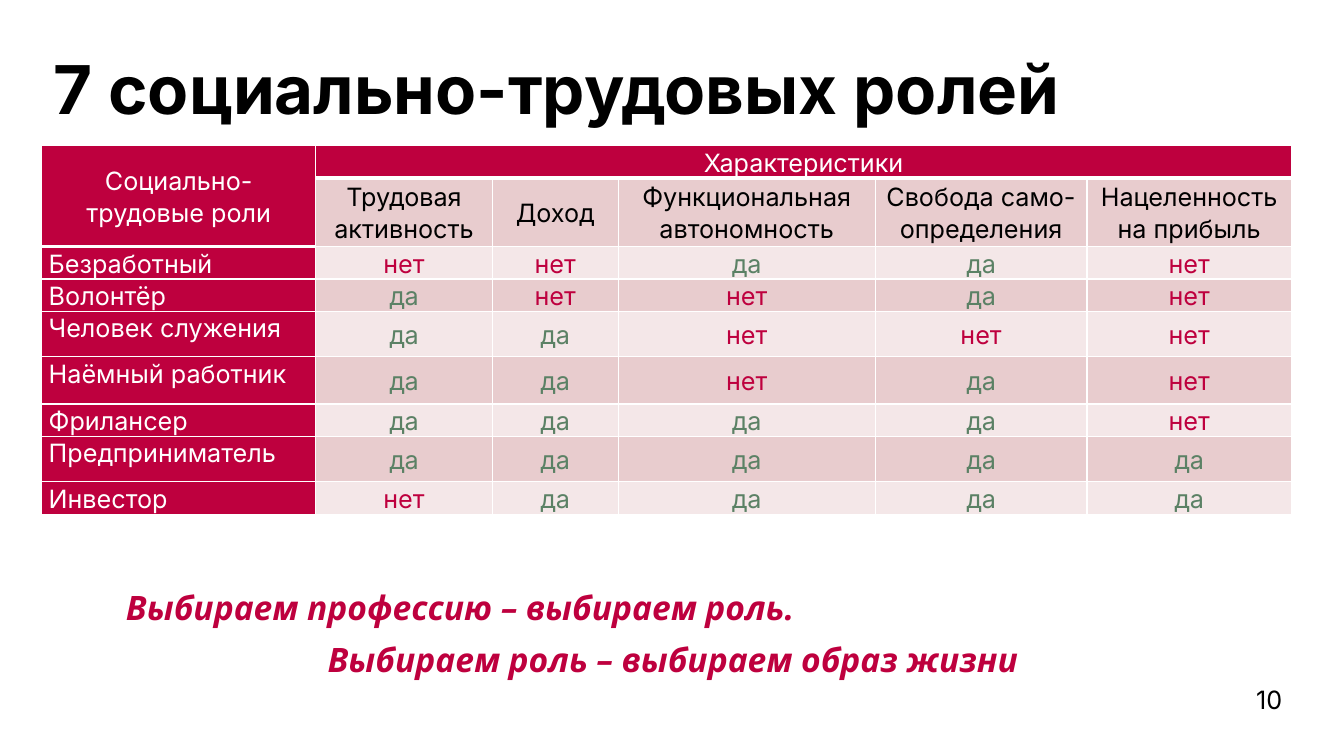
from lxml.etree import SubElement
from pptx import Presentation
from pptx.dml.color import RGBColor
from pptx.enum.text import MSO_ANCHOR, MSO_AUTO_SIZE, PP_ALIGN
from pptx.oxml.ns import qn
from pptx.util import Pt

TITLE = "7 социально-трудовых ролей"
MOTTO = ["Выбираем профессию – выбираем роль.",
         "Выбираем роль – выбираем образ жизни"]
PAGE_NUMBER = "10"
ROLES_HEADING = "Социально-трудовые роли"
TRAITS_HEADING = "Характеристики"
TRAITS = ["Трудовая активность", "Доход", "Функциональная автономность",
          "Свобода само-определения", "Нацеленность на прибыль"]
ROLES = [
    ("Безработный", "нет нет да да нет"),
    ("Волонтёр", "да нет нет да нет"),
    ("Человек служения", "да да нет нет нет"),
    ("Наёмный работник", "да да нет да нет"),
    ("Фрилансер", "да да да да нет"),
    ("Предприниматель", "да да да да да"),
    ("Инвестор", "нет да да да да"),
]

COLORS = {"black": "000000", "white": "FFFFFF", "crimson": "BE003E",
          "green": "5B8165", "rose": "E8CCCE", "blush": "F4E7E8"}
ANSWER_COLORS = {"да": "green", "нет": "crimson"}
COLUMN_WIDTHS = [195.84, 126, 90, 183.6, 151.2, 146.16]
ROW_HEIGHTS = [18, 49, 18, 18, 32.4, 33.84, 18, 32.4, 18]
CELL_MARGINS = {"margin_left": Pt(5), "margin_right": Pt(5),
                "margin_top": 0, "margin_bottom": 0}
NO_MARGINS = dict.fromkeys(CELL_MARGINS, 0)
CELL_SPACING = {"line_spacing": 1.07, "space_after": Pt(8)}


def set_all(target, values):
    for name, value in values.items():
        setattr(target, name, value)


def color(name):
    return RGBColor.from_string(COLORS[name])


def write(para, text, ink, spacing, size=18, font="Inter", **style):
    set_all(para, spacing)
    span = para.add_run()
    span.text = text
    set_all(span.font, {"name": font, "size": Pt(size), **style})
    span.font.color.rgb = color(ink)


def add_box(page, left, top, width, height, **frame_values):
    box = page.shapes.add_textbox(Pt(left), Pt(top), Pt(width), Pt(height))
    set_all(box.text_frame, {"word_wrap": True, **frame_values})
    return box.text_frame


def add_borders(cell, bottom):
    properties = cell._tc.get_or_add_tcPr()
    for side, width in (("L", 1), ("R", 1), ("T", 1), ("B", bottom)):
        line = SubElement(properties, qn(f"a:ln{side}"), w=str(Pt(width)))
        fill = SubElement(line, qn("a:solidFill"))
        SubElement(fill, qn("a:srgbClr"), val=COLORS["white"])


def style_cell(cell, fill, bottom=1):
    add_borders(cell, bottom)
    cell.fill.solid()
    cell.fill.fore_color.rgb = color(fill)
    set_all(cell, CELL_MARGINS)


def fill_cell(cell, text, ink, align=PP_ALIGN.CENTER, anchor=MSO_ANCHOR.MIDDLE):
    cell.vertical_anchor = anchor
    write(cell.text_frame.paragraphs[0], text, ink,
          {"alignment": align, **CELL_SPACING})


def add_roles_table(page):
    table = page.shapes.add_table(
        len(ROW_HEIGHTS), len(COLUMN_WIDTHS), Pt(29.8), Pt(104),
        Pt(sum(COLUMN_WIDTHS)), Pt(sum(ROW_HEIGHTS))).table
    for column, width in zip(table.columns, COLUMN_WIDTHS):
        column.width = Pt(width)
    for row, height in zip(table.rows, ROW_HEIGHTS):
        row.height = Pt(height)

    for row in range(len(ROW_HEIGHTS)):
        band = "rose" if row % 2 else "blush"
        for column in range(len(COLUMN_WIDTHS)):
            heading = row == 0 or column == 0
            style_cell(table.cell(row, column), "crimson" if heading else band,
                       bottom=3 if row == 0 else 1)

    table.cell(0, 0).merge(table.cell(1, 0))
    table.cell(0, 1).merge(table.cell(0, len(TRAITS)))
    fill_cell(table.cell(0, 0), ROLES_HEADING, "white")
    fill_cell(table.cell(0, 1), TRAITS_HEADING, "white")
    for column, trait in enumerate(TRAITS, 1):
        fill_cell(table.cell(1, column), trait, "black")
    for row, (role, answers) in enumerate(ROLES, 2):
        fill_cell(table.cell(row, 0), role, "white",
                  PP_ALIGN.JUSTIFY, MSO_ANCHOR.TOP)
        for column, answer in enumerate(answers.split(), 1):
            fill_cell(table.cell(row, column), answer, ANSWER_COLORS[answer])


def add_motto(page):
    """Write the motto, each line indented further than the one before."""
    frame = add_box(page, 90, 410.4, 733.7, 72.8, **NO_MARGINS)
    for index, text in enumerate(MOTTO):
        para = frame.add_paragraph() if index else frame.paragraphs[0]
        write(para, text, "crimson", {"line_spacing": 1.3},
              size=24, font="Noto Sans", bold=True, italic=True)
        para._p.get_or_add_pPr().set("marL", str(Pt(144 * index)))


def main():
    deck = Presentation()
    deck.slide_width, deck.slide_height = Pt(960), Pt(540)
    page = deck.slides.add_slide(deck.slide_layouts[6])

    title = add_box(page, 38.2, 44.6, 733.7, 46.8,
                    auto_size=MSO_AUTO_SIZE.SHAPE_TO_FIT_TEXT, **NO_MARGINS)
    write(title.paragraphs[0], TITLE, "black",
          {"line_spacing": 0.8, "space_after": Pt(30)}, size=48, bold=True)
    add_motto(page)
    number = add_box(page, 761, 485.3, 162, 28.8)
    write(number.paragraphs[0], PAGE_NUMBER, "black",
          {"alignment": PP_ALIGN.RIGHT})
    add_roles_table(page)
    deck.save("out.pptx")


if __name__ == "__main__":
    main()
